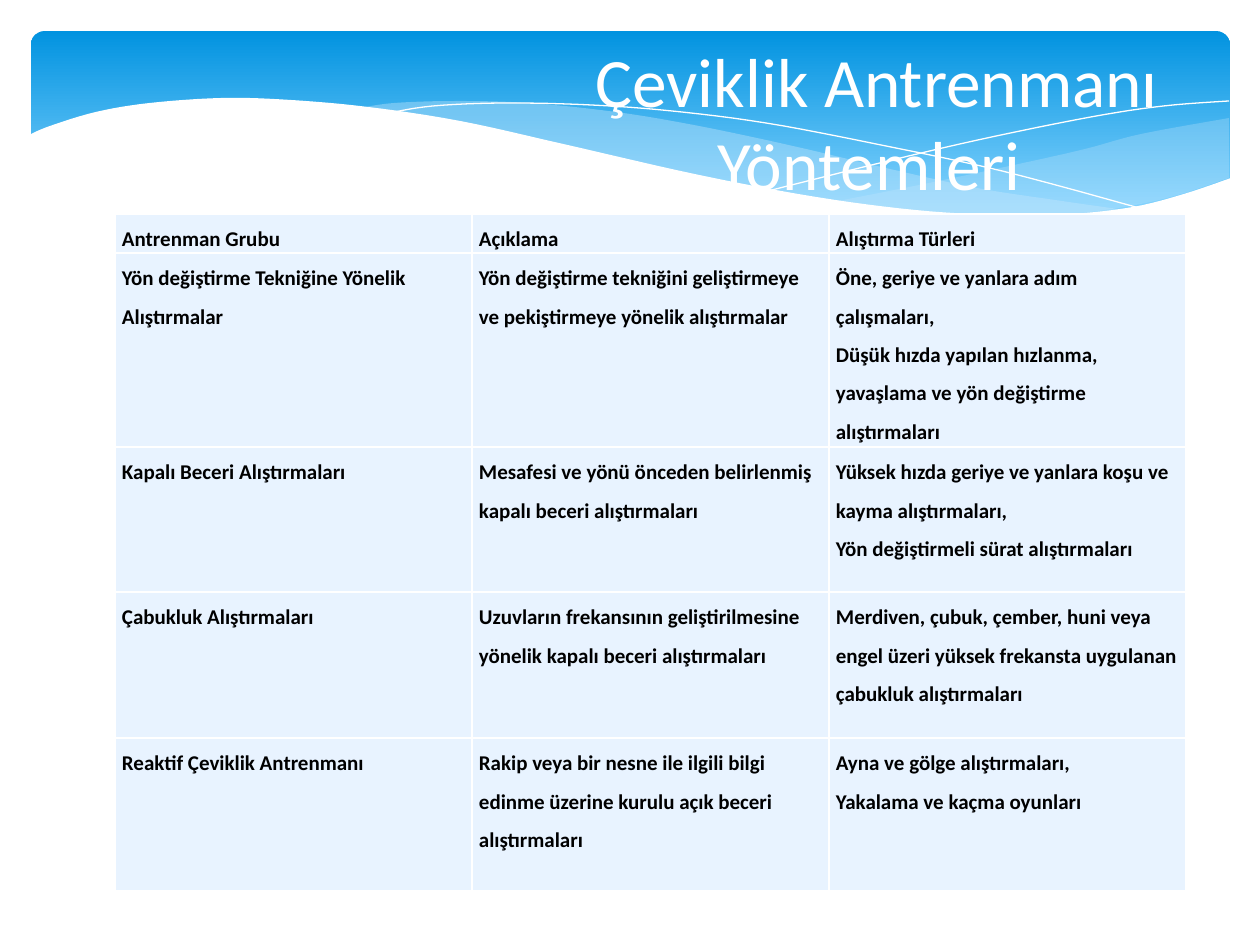
import pptx
import pptx.dml.color
import pptx.enum.shapes
import pptx.enum.text
import pptx.oxml
import pptx.oxml.ns
import pptx.util

PX = 914400 / 126
FONT = "Calibri"
COLORS = {
    "sky": "0293E0",
    "sky_light": "83D3FE",
    "wave": "C6E7FC",
    "white": "FFFFFF",
    "cell": "E8F3FF",
    "text": "000000",
}

# Each wave is a list of smooth arcs joined at their ends.
RIGHT_WAVE = [
    [(1229, 118), (1141, 134), (1085, 149), (1014, 165), (919, 185), (833, 202)],
    [(833, 202), (922, 212), (1000, 217), (1063, 215), (1130, 206), (1178, 195), (1229, 178)],
]
MIDDLE_WAVE = [
    [(1125, 210), (1055, 200), (977, 188), (890, 169), (793, 146), (699, 126),
     (616, 112), (529, 103), (455, 101), (394, 103), (360, 108)],
    [(360, 108), (431, 118), (509, 134), (566, 146), (668, 170), (757, 189),
     (838, 203), (927, 213), (1003, 218), (1068, 217), (1125, 210)],
]
FALLING_LINE = [[(389, 113), (433, 106), (505, 103), (591, 105), (672, 111),
                 (766, 123), (876, 144), (1002, 171), (1143, 209)]]
RISING_LINE = [[(772, 190), (876, 164), (978, 140), (1091, 117), (1164, 106), (1229, 101)]]
WHITE_WAVE = [
    [(1231, 178), (1184, 194), (1133, 207), (1071, 214), (999, 215), (915, 210),
     (816, 197), (699, 175), (563, 144), (460, 121), (368, 107), (290, 100),
     (223, 98), (150, 103), (96, 112), (50, 126), (29, 135)],
    [(29, 282), (1231, 282)],
]

ROW_HEIGHTS = [39, 194, 145, 146, 153]
ROWS = [
    ["Antrenman Grubu", "Açıklama", "Alıştırma Türleri"],
    ["Yön değiştirme Tekniğine Yönelik Alıştırmalar",
     "Yön değiştirme tekniğini geliştirmeye ve pekiştirmeye yönelik alıştırmalar",
     "Öne, geriye ve yanlara adım çalışmaları,\n"
     "Düşük hızda yapılan hızlanma, yavaşlama ve yön değiştirme alıştırmaları"],
    ["Kapalı Beceri Alıştırmaları",
     "Mesafesi ve yönü önceden belirlenmiş kapalı beceri alıştırmaları",
     "Yüksek hızda geriye ve yanlara koşu ve kayma alıştırmaları,\n"
     "Yön değiştirmeli sürat alıştırmaları"],
    ["Çabukluk Alıştırmaları",
     "Uzuvların frekansının geliştirilmesine yönelik kapalı beceri alıştırmaları",
     "Merdiven, çubuk, çember, huni veya engel üzeri yüksek frekansta uygulanan "
     "çabukluk alıştırmaları"],
    ["Reaktif Çeviklik Antrenmanı",
     "Rakip veya bir nesne ile ilgili bilgi edinme üzerine kurulu açık beceri alıştırmaları",
     "Ayna ve gölge alıştırmaları,\nYakalama ve kaçma oyunları"],
]


def px(n):
    return pptx.util.Emu(round(n * PX))


def rgb(name):
    return pptx.dml.color.RGBColor.from_string(COLORS[name])


def write(tf, text, size=12, color="text", bold=False, align=None, spacing=None):
    """Fill a text frame, one paragraph per line of text."""
    for i, line in enumerate(text.split("\n")):
        p = tf.add_paragraph() if i else tf.paragraphs[0]
        p.alignment = align
        p.line_spacing = spacing
        r = p.add_run()
        r.text = line
        r.font.name = FONT
        r.font.size = pptx.util.Pt(size)
        r.font.bold = bold
        r.font.color.rgb = rgb(color)


def smooth(points, steps=6):
    """Sample a Catmull-Rom curve through the points."""
    if len(points) < 3:
        return points
    ends = [points[0], *points, points[-1]]
    out = [points[0]]
    for a, b, c, d in zip(ends, ends[1:], ends[2:], ends[3:]):
        for k in range(1, steps + 1):
            t = k / steps
            out.append(tuple(
                (2 * q + (r - p) * t + (2 * p - 5 * q + 4 * r - s) * t ** 2
                 + (3 * q - p - 3 * r + s) * t ** 3) / 2
                for p, q, r, s in zip(a, b, c, d)))
    return out


def set_borders(cell, color="white", width=1):
    tc_pr = cell._tc.get_or_add_tcPr()
    for side in ("lnL", "lnR", "lnT", "lnB"):
        tc_pr.append(pptx.oxml.parse_xml(
            f'<a:{side} {pptx.oxml.ns.nsdecls("a")} w="{pptx.util.Pt(width)}">'
            f'<a:solidFill><a:srgbClr val="{COLORS[color]}"/></a:solidFill></a:{side}>'))


class Deck:
    def __init__(self, width, height):
        self.prs = pptx.Presentation()
        self.prs.slide_width, self.prs.slide_height = px(width), px(height)
        self.s = self.prs.slides.add_slide(self.prs.slide_layouts[5])

    def banner(self, x, y, w, h):
        sp = self.s.shapes.add_shape(
            pptx.enum.shapes.MSO_SHAPE.ROUNDED_RECTANGLE, px(x), px(y), px(w), px(h))
        sp.adjustments[0] = 0.07
        sp.shadow.inherit = False
        sp.line.fill.background()
        sp.fill.gradient()
        sp.fill.gradient_angle = 270
        for stop, color, pos in zip(sp.fill.gradient_stops, ("sky", "sky_light"), (0, 0.9)):
            stop.color.rgb = rgb(color)
            stop.position = pos

    def outline(self, arcs, closed):
        points = [(px(x), px(y)) for arc in arcs for x, y in smooth(arc)]
        builder = self.s.shapes.build_freeform(*points[0])
        builder.add_line_segments(points[1:], close=closed)
        sp = builder.convert_to_shape()
        sp.shadow.inherit = False
        return sp

    def wave(self, arcs, color, opacity=100):
        sp = self.outline(arcs, True)
        sp.line.fill.background()
        sp.fill.solid()
        sp.fill.fore_color.rgb = rgb(color)
        if opacity < 100:
            clr = sp._element.spPr.find(".//" + pptx.oxml.ns.qn("a:srgbClr"))
            clr.append(pptx.oxml.parse_xml(
                f'<a:alpha {pptx.oxml.ns.nsdecls("a")} val="{opacity * 1000}"/>'))

    def hairline(self, arcs, color):
        sp = self.outline(arcs, False)
        sp.fill.background()
        sp.line.color.rgb = rgb(color)
        sp.line.width = 0

    def title(self, text, x, y, w, h):
        sp = self.s.shapes.title
        sp.left, sp.top, sp.width, sp.height = px(x), px(y), px(w), px(h)
        self.s.shapes._spTree.append(sp._element)  # bring in front of the waves
        tf = sp.text_frame
        tf.word_wrap = True
        tf.auto_size = pptx.enum.text.MSO_AUTO_SIZE.NONE
        tf.vertical_anchor = pptx.enum.text.MSO_ANCHOR.MIDDLE
        write(tf, text, size=39.6, color="white", align=pptx.enum.text.PP_ALIGN.CENTER)

    def table(self, rows, x, y, col_width, heights):
        cols = len(rows[0])
        table = self.s.shapes.add_table(
            len(rows), cols, px(x), px(y), px(col_width * cols), px(sum(heights))).table
        for col in table.columns:
            col.width = px(col_width)
        for row, height, texts in zip(table.rows, heights, rows):
            row.height = px(height)
            for cell, text in zip(row.cells, texts):
                cell.margin_left = cell.margin_right = px(7)
                cell.margin_top = cell.margin_bottom = 0
                set_borders(cell)
                cell.fill.solid()
                cell.fill.fore_color.rgb = rgb("cell")
                write(cell.text_frame, text, bold=True, spacing=1.5)


def main():
    deck = Deck(1260, 945)
    deck.banner(31, 31, 1199, 197)
    deck.wave(RIGHT_WAVE, "wave", 29)
    deck.wave(MIDDLE_WAVE, "wave", 40)
    deck.hairline(FALLING_LINE, "white")
    deck.hairline(RISING_LINE, "white")
    deck.wave(WHITE_WAVE, "white")
    deck.title("Çeviklik Antrenmanı Yöntemleri ", 530, 37, 694, 169)
    deck.table(ROWS, 115, 214, 357, ROW_HEIGHTS)
    deck.prs.save("out.pptx")


if __name__ == "__main__":
    main()
